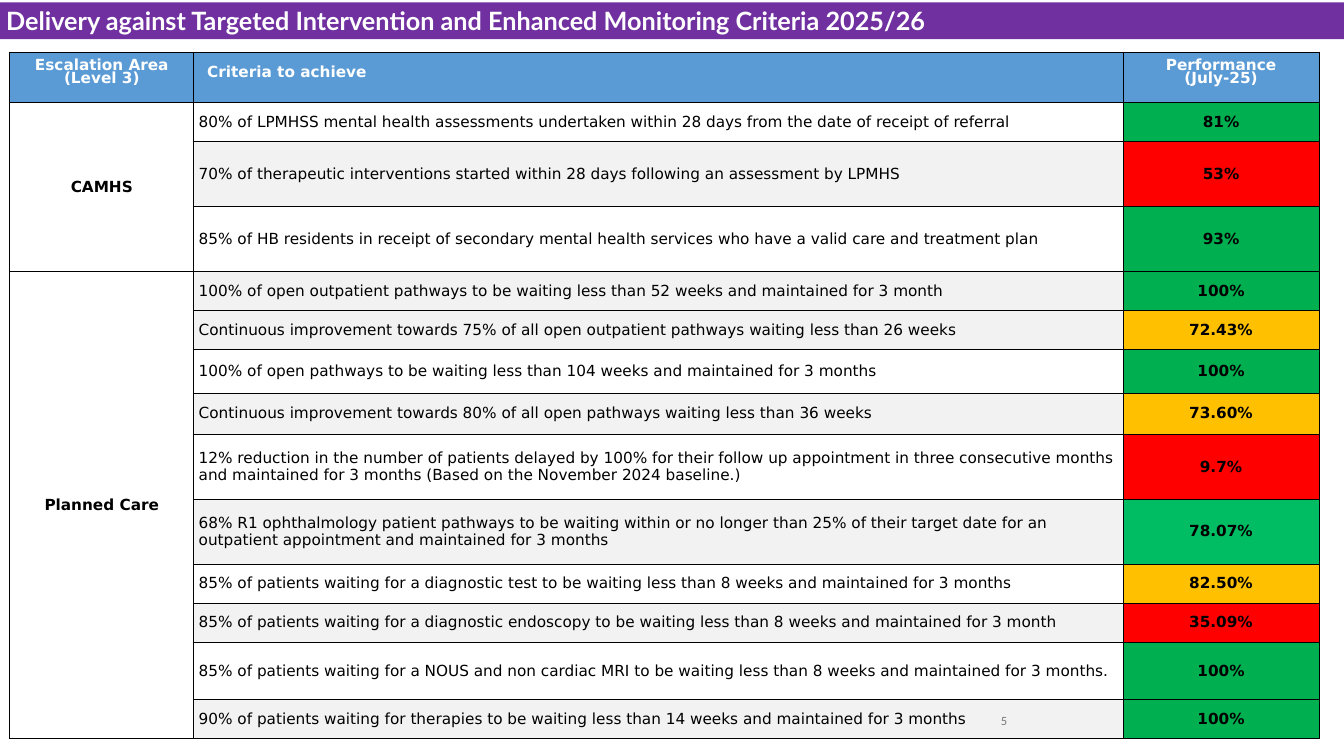
import lxml.etree
import pptx
import pptx.dml.color
import pptx.enum.text
import pptx.oxml.ns
import pptx.util

Inches = pptx.util.Inches
Align = pptx.enum.text.PP_ALIGN
Anchor = pptx.enum.text.MSO_ANCHOR
COLORS = {
    "banner": "7030A0", "header": "5B9BD5", "white": "FFFFFF", "black": "000000",
    "stripe": "F2F2F2", "number": "797979", "green": "00B050", "mint": "00BC62",
    "amber": "FFC000", "red": "FF0000",
}
COLUMN_WIDTHS = [3.01, 15.2, 3.2]
HEADER_HEIGHT = 0.83
HEADINGS = [
    (["Escalation Area", "(Level 3)"], Align.CENTER),
    (["Criteria to achieve"], Align.LEFT),
    (["Performance", "(July-25)"], Align.CENTER),
]
AREAS = {
    "CAMHS": [
        (0.64, "80% of LPMHSS mental health assessments undertaken within 28 days from the date of receipt of referral", "white", "81%", "green"),
        (1.06, "70% of therapeutic interventions started within 28 days following an assessment by LPMHS", "stripe", "53%", "red"),
        (1.06, "85% of HB residents in receipt of secondary mental health services who have a valid care and treatment plan", "white", "93%", "green"),
    ],
    "Planned Care": [
        (0.64, "100% of open outpatient pathways to be waiting less than 52 weeks and maintained for 3 month", "stripe", "100%", "green"),
        (0.64, "Continuous improvement towards 75% of all open outpatient pathways waiting less than 26 weeks", "stripe", "72.43%", "amber"),
        (0.71, "100% of open pathways to be waiting less than 104 weeks and maintained for 3 months", "white", "100%", "green"),
        (0.68, "Continuous improvement towards 80% of all open pathways waiting less than 36 weeks", "stripe", "73.60%", "amber"),
        (1.06, "12% reduction in the number of patients delayed by 100% for their follow up appointment in three consecutive months and maintained for 3 months (Based on the November 2024 baseline.)", "white", "9.7%", "red"),
        (1.06, "68% R1 ophthalmology patient pathways to be waiting within or no longer than 25% of their target date for an outpatient appointment and maintained for 3 months", "stripe", "78.07%", "mint"),
        (0.64, "85% of patients waiting for a diagnostic test to be waiting less than 8 weeks and maintained for 3 months", "white", "82.50%", "amber"),
        (0.64, "85% of patients waiting for a diagnostic endoscopy to be waiting less than 8 weeks and maintained for 3 month", "stripe", "35.09%", "red"),
        (0.94, "85% of patients waiting for a NOUS and non cardiac MRI to be waiting less than 8 weeks and maintained for 3 months.", "white", "100%", "green"),
        (0.64, "90% of patients waiting for therapies to be waiting less than 14 weeks and maintained for 3 months", "stripe", "100%", "green"),
    ],
}


def rgb(name):
    """Return the named colour."""
    return pptx.dml.color.RGBColor.from_string(COLORS[name])


def write(para, text, font="DejaVu Sans", size=18, color="black", bold=False, align=Align.LEFT):
    """Add one formatted run to a paragraph."""
    para.alignment = align
    span = para.add_run()
    span.text = text
    span.font.name = font
    span.font.size = pptx.util.Pt(size)
    span.font.bold = bold
    span.font.color.rgb = rgb(color)


def set_margins(holder, side, edge):
    """Set the inner margins of a cell or text frame."""
    holder.margin_left = holder.margin_right = Inches(side)
    holder.margin_top = holder.margin_bottom = Inches(edge)


def style_cell(cell, fill, side=0.08, edge=0.08):
    """Give a cell its borders, fill, margins and anchor."""
    properties = cell._tc.get_or_add_tcPr()
    for border in ("lnL", "lnR", "lnT", "lnB"):
        line = lxml.etree.SubElement(properties, pptx.oxml.ns.qn(f"a:{border}"), w="12700")
        solid = lxml.etree.SubElement(line, pptx.oxml.ns.qn("a:solidFill"))
        lxml.etree.SubElement(solid, pptx.oxml.ns.qn("a:srgbClr"), val=COLORS["black"])
    cell.fill.solid()
    cell.fill.fore_color.rgb = rgb(fill)
    cell.vertical_anchor = Anchor.MIDDLE
    set_margins(cell, side, edge)


def fill_header(table):
    """Write the heading row."""
    for column, (lines, align) in enumerate(HEADINGS):
        cell = table.cell(0, column)
        style_cell(cell, "header", 0.22, 0.11)
        for index, text in enumerate(lines):
            para = cell.text_frame.add_paragraph() if index else cell.text_frame.paragraphs[0]
            para.line_spacing = pptx.util.Pt(8)
            para.space_before = pptx.util.Pt(8 * index)
            write(para, text, color="white", bold=True, align=align)


def fill_area(table, first, area, criteria):
    """Write one escalation area from the given row down."""
    for row, (height, criterion, shade, result, status) in enumerate(criteria, first):
        table.rows[row].height = Inches(height)
        for column, fill in enumerate(("white", shade, status)):
            style_cell(table.cell(row, column), fill)
        write(table.cell(row, 1).text_frame.paragraphs[0], criterion)
        write(table.cell(row, 2).text_frame.paragraphs[0], result, bold=True, align=Align.CENTER)
    label = table.cell(first, 0)
    label.merge(table.cell(first + len(criteria) - 1, 0))
    write(label.text_frame.paragraphs[0], area, bold=True, align=Align.CENTER)


def add_criteria_table(page, left, top, width, height):
    """Place the criteria table in the given box."""
    count = 1 + sum(len(criteria) for criteria in AREAS.values())
    table = page.shapes.add_table(count, len(COLUMN_WIDTHS), Inches(left), Inches(top), Inches(width), Inches(height)).table
    table.first_row = table.horz_banding = False
    for column, share in zip(table.columns, COLUMN_WIDTHS):
        column.width = Inches(width * share / sum(COLUMN_WIDTHS))
    table.rows[0].height = Inches(HEADER_HEIGHT)
    fill_header(table)
    first = 1
    for area, criteria in AREAS.items():
        fill_area(table, first, area, criteria)
        first += len(criteria)


def add_banner(page, left, top, width, height):
    """Turn the title placeholder into the banner."""
    title = page.shapes.title
    title.left, title.top, title.width, title.height = map(Inches, (left, top, width, height))
    title.fill.solid()
    title.fill.fore_color.rgb = rgb("banner")
    frame = title.text_frame
    frame.auto_size = pptx.enum.text.MSO_AUTO_SIZE.NONE
    frame.vertical_anchor = Anchor.MIDDLE
    set_margins(frame, 0.1, 0.05)
    write(frame.paragraphs[0], "Delivery against Targeted Intervention and Enhanced Monitoring Criteria 2025/26",
          font="Lato", size=29.7, color="white", bold=True)


def add_page_number(page, left, top, width, height):
    """Place the page number in the given box."""
    frame = page.shapes.add_textbox(Inches(left), Inches(top), Inches(width), Inches(height)).text_frame
    frame.word_wrap = True
    frame.vertical_anchor = Anchor.MIDDLE
    set_margins(frame, 0.16, 0.08)
    write(frame.paragraphs[0], "5", font="Calibri", size=14.8, color="number", align=Align.RIGHT)


def main():
    """Build and save the deck."""
    deck = pptx.Presentation()
    deck.slide_width, deck.slide_height = Inches(21.99), Inches(12.37)
    page = deck.slides.add_slide(deck.slide_layouts[5])
    add_banner(page, 0, 0.04, 21.99, 0.6)
    add_criteria_table(page, 0.16, 0.85, 21.42, 11.27)
    add_page_number(page, 12.62, 11.46, 4.02, 0.66)
    deck.save("out.pptx")


if __name__ == "__main__":
    main()
